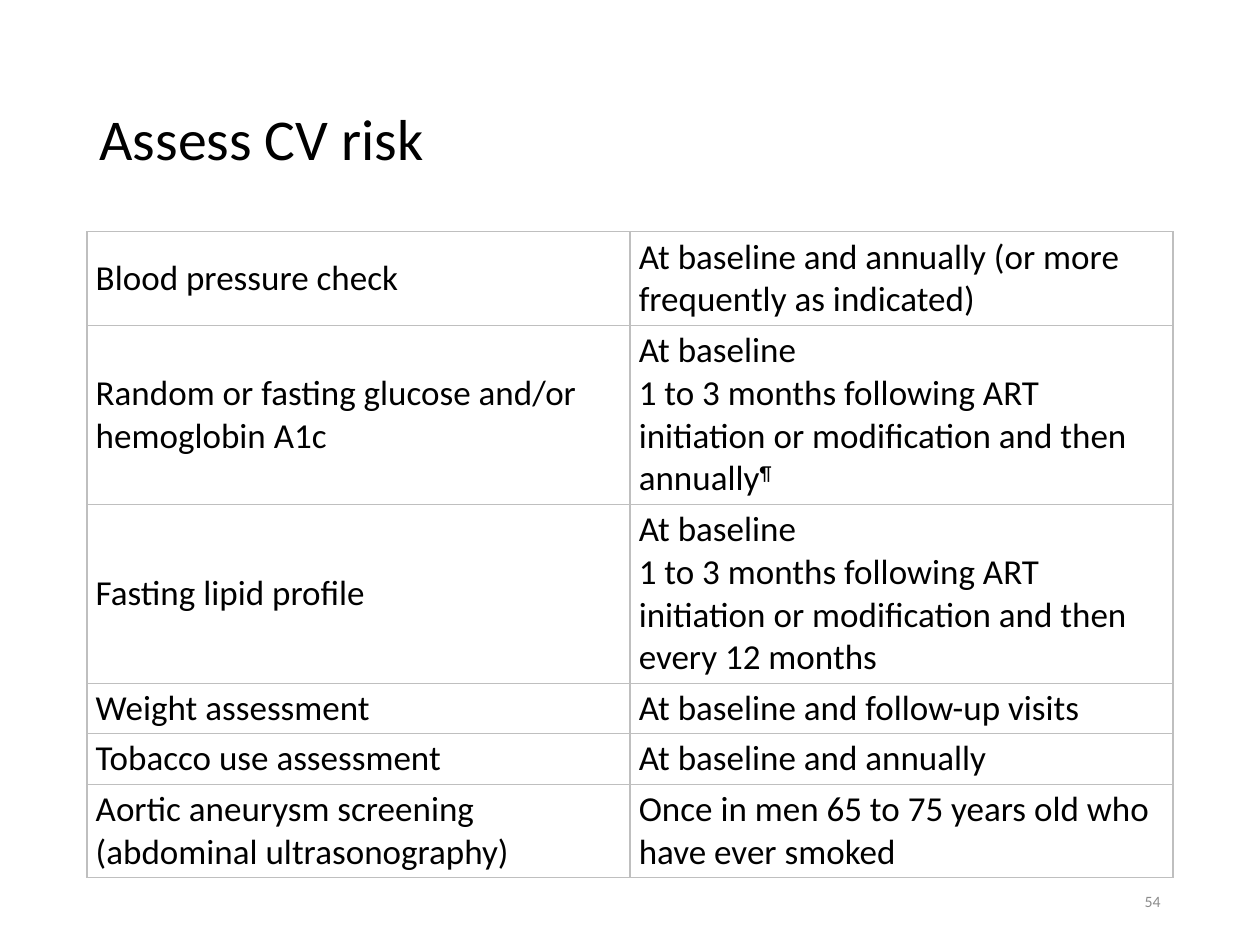
from dataclasses import dataclass

from lxml.etree import SubElement
from pptx import Presentation
from pptx.dml.color import RGBColor
from pptx.enum.text import MSO_ANCHOR as Anchor, MSO_AUTO_SIZE as AutoSize, PP_ALIGN as Align
from pptx.oxml.ns import qn
from pptx.util import Inches, Pt


@dataclass(frozen=True)
class Theme:
    font: str = "Calibri"
    ink: str = "000000"
    muted: str = "8C8C8C"
    paper: str = "FFFFFF"
    border: str = "BFBFBF"
    border_width: float = 0.75
    title_size: int = 33
    table_size: int = 20
    number_size: int = 9


@dataclass(frozen=True)
class Screening:
    test: str
    timing: tuple[str, ...]
    min_height: float = 0.23
    footnote_mark: str = ""


THEME = Theme()
LEFT, WIDTH = 0.69, 8.62
FOLLOW_UP = "1 to 3 months following ART initiation or modification and then"
SCREENINGS = (
    Screening("Blood pressure check",
              ("At baseline and annually (or more frequently as indicated)",)),
    Screening("Random or fasting glucose and/or hemoglobin A1c",
              ("At baseline", f"{FOLLOW_UP} annually"), 0.38, "¶"),
    Screening("Fasting lipid profile",
              ("At baseline", f"{FOLLOW_UP} every 12 months"), 0.54),
    Screening("Weight assessment", ("At baseline and follow-up visits",)),
    Screening("Tobacco use assessment", ("At baseline and annually",)),
    Screening("Aortic aneurysm screening (abdominal ultrasonography)",
              ("Once in men 65 to 75 years old who have ever smoked",)),
)


def add_run(paragraph, text: str, size: int, color: str = THEME.ink):
    run = paragraph.add_run()
    run.text = text
    run.font.name = THEME.font
    run.font.size = Pt(size)
    run.font.color.rgb = RGBColor.from_string(color)
    return run


def place(shape, left: float, top: float, width: float, height: float) -> None:
    shape.left, shape.top = Inches(left), Inches(top)
    shape.width, shape.height = Inches(width), Inches(height)


def add_borders(cell) -> None:
    """Outline all four sides; borders must precede the fill in the cell XML."""
    properties = cell._tc.get_or_add_tcPr()
    for side in ("a:lnL", "a:lnR", "a:lnT", "a:lnB"):
        line = SubElement(properties, qn(side), w=str(Pt(THEME.border_width)))
        fill = SubElement(line, qn("a:solidFill"))
        SubElement(fill, qn("a:srgbClr"), val=THEME.border)


def fill_cell(cell, lines: tuple[str, ...], footnote_mark: str = "") -> None:
    add_borders(cell)
    cell.fill.solid()
    cell.fill.fore_color.rgb = RGBColor.from_string(THEME.paper)
    cell.vertical_anchor = Anchor.MIDDLE
    cell.margin_left = cell.margin_right = Inches(0.07)
    cell.margin_top = cell.margin_bottom = Inches(0.03)
    frame = cell.text_frame
    for index, line in enumerate(lines):
        paragraph = frame.add_paragraph() if index else frame.paragraphs[0]
        add_run(paragraph, line, THEME.table_size)
    if footnote_mark:
        mark = add_run(paragraph, footnote_mark, THEME.table_size)
        mark.font._element.set("baseline", "30000")


def add_title(slide, text: str) -> None:
    title = slide.shapes.title
    place(title, LEFT, 0.4, WIDTH, 1.45)
    frame = title.text_frame
    frame.auto_size = AutoSize.NONE
    frame.vertical_anchor = Anchor.MIDDLE
    paragraph = frame.paragraphs[0]
    paragraph.alignment = Align.LEFT
    paragraph.line_spacing = 0.9
    add_run(paragraph, text, THEME.title_size)


def add_screening_table(slide, screenings: tuple[Screening, ...]) -> None:
    box = (LEFT, 1.84, WIDTH, 5.09)
    holder = slide.shapes.add_table(len(screenings), 2, *map(Inches, box))
    table = holder.table
    table.first_row = table.horz_banding = False
    for row, screening in zip(table.rows, screenings):
        row.height = Inches(screening.min_height)
        test, timing = row.cells
        fill_cell(test, (screening.test,))
        fill_cell(timing, screening.timing, screening.footnote_mark)
    place(holder, *box)


def add_slide_number(slide, number: str) -> None:
    box = slide.shapes.add_textbox(*map(Inches, (7.06, 6.95, 2.25, 0.4)))
    frame = box.text_frame
    frame.word_wrap = True
    frame.vertical_anchor = Anchor.MIDDLE
    paragraph = frame.paragraphs[0]
    paragraph.alignment = Align.RIGHT
    add_run(paragraph, number, THEME.number_size, THEME.muted)


def main() -> None:
    deck = Presentation()
    deck.slide_width, deck.slide_height = Inches(10), Inches(7.5)
    slide = deck.slides.add_slide(deck.slide_layouts.get_by_name("Title Only"))
    add_title(slide, "Assess CV risk")
    add_screening_table(slide, SCREENINGS)
    add_slide_number(slide, "54")
    deck.save("out.pptx")


if __name__ == "__main__":
    main()
